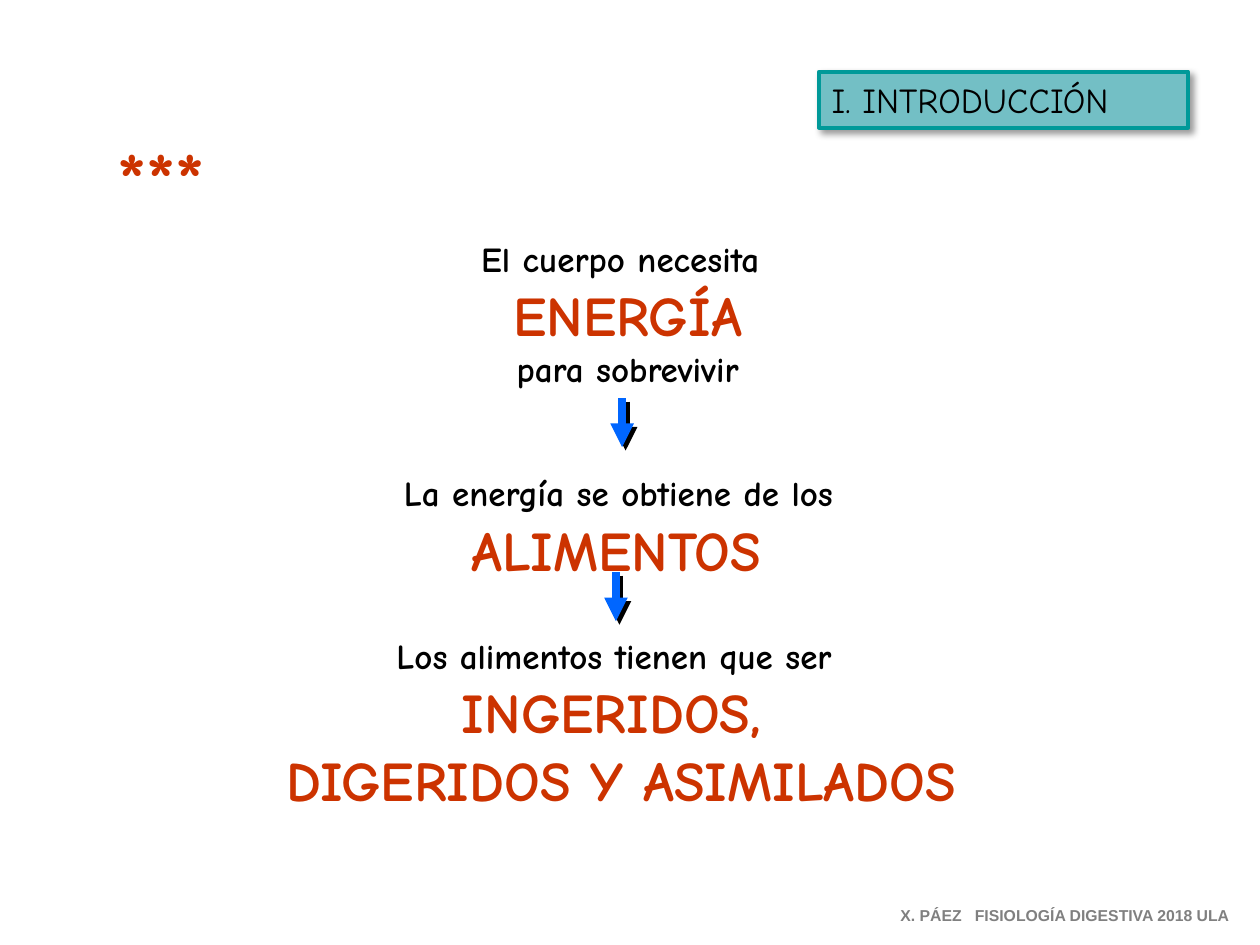
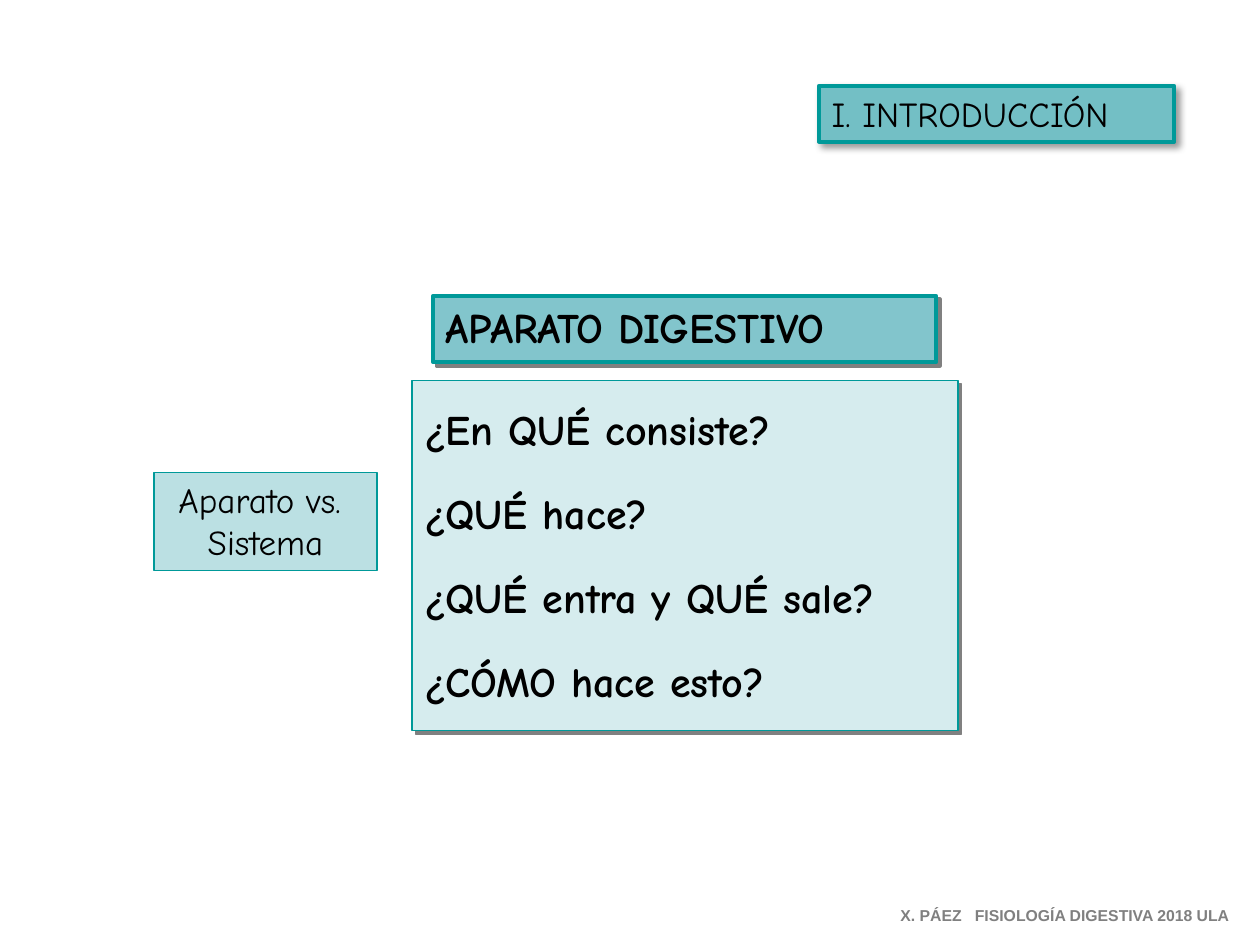
from dataclasses import dataclass

from lxml.etree import SubElement as Sub
from pptx import Presentation
from pptx.dml.color import RGBColor as Rgb
from pptx.enum.shapes import MSO_CONNECTOR as Conn, MSO_SHAPE as Form
from pptx.enum.text import MSO_ANCHOR as Anchor, MSO_AUTO_SIZE as Auto, PP_ALIGN as Align
from pptx.oxml.ns import qn
from pptx.util import Pt


@dataclass(frozen=True)
class Theme:
    # Fonts
    main: str = "Comic Neue"
    small: str = "Arial"
    # Colours
    ink: str = "000000"
    red: str = "CC3300"
    blue: str = "0066FF"
    grey: str = "808080"
    teal: str = "009999"
    band: str = "73BFC5"
    head: str = "82C5CC"
    pale: str = "D6ECEE"
    note: str = "BBE0E3"
    # Type sizes
    foot: int = 9
    text: int = 20
    list: int = 24
    key: int = 32
    star: int = 44
    # Shadows: colour, opacity, blur, distance
    soft: tuple = ("000000", 40, 4, 3)
    hard: tuple = ("808080", 100, 0, 2.8)
    dark: tuple = ("000000", 100, 0, 2.8)


class Deck:
    def __init__(self, theme):
        self.theme = theme
        self.prs = Presentation()
        self.prs.slide_width, self.prs.slide_height = Pt(720), Pt(540)
        self.slide = None

    def page(self, layout, title, place):
        """Start a slide with its section band and footer."""
        t = self.theme
        self.slide = self.prs.slides.add_slide(self.prs.slide_layouts[layout])
        band = self.slide.shapes.title
        self.move(band, place)
        self.paint(band, t.band, 2.25, t.soft)
        self.fill(band, [title], t.text)
        self.text((507.5, 514, 210.5, 18), ["X. PÁEZ   FISIOLOGÍA DIGESTIVA 2018 ULA"],
                  t.foot, t.grey, bold=True, font=t.small)

    def move(self, shape, place):
        shape.left, shape.top, shape.width, shape.height = map(Pt, place)

    def shade(self, effects, look):
        """Fill an effect list with one outer shadow towards the lower right."""
        colour, alpha, blur, dist = look
        outer = Sub(effects, qn("a:outerShdw"), blurRad=str(Pt(blur)), dist=str(Pt(dist)),
                    dir="2700000", algn="ctr", rotWithShape="0")
        tint = Sub(outer, qn("a:srgbClr"), val=colour)
        Sub(tint, qn("a:alpha"), val=str(alpha * 1000))

    def paint(self, shape, fill, width, shadow=None):
        shape.fill.solid()
        shape.fill.fore_color.rgb = Rgb.from_string(fill)
        shape.line.color.rgb = Rgb.from_string(self.theme.teal)
        shape.line.width = Pt(width)
        shape.shadow.inherit = False
        if shadow:
            self.shade(shape.element.spPr.find(qn("a:effectLst")), shadow)

    def style(self, run, size, colour, bold, font):
        run.font.name, run.font.size, run.font.bold = font, Pt(size), bold
        run.font.color.rgb = Rgb.from_string(colour)

    def fill(self, shape, lines, size, colour=None, bold=False, font=None,
             align=Align.LEFT, gap=0):
        """Put formatted lines of text in a shape."""
        frame = shape.text_frame
        frame.text = "\n".join(lines)
        frame.word_wrap, frame.auto_size = True, Auto.NONE
        frame.vertical_anchor = Anchor.TOP
        for row, par in enumerate(frame.paragraphs):
            par.alignment, par.line_spacing = align, 1.0
            par.space_before = Pt(gap if row else 0)
            for run in par.runs:
                self.style(run, size, colour or self.theme.ink, bold, font or self.theme.main)
        return frame

    def text(self, place, lines, size, colour=None, **look):
        box = self.slide.shapes.add_textbox(*map(Pt, place))
        return self.fill(box, lines, size, colour, **look)

    def box(self, place, fill, width, lines, size, shadow=None, **look):
        shape = self.slide.shapes.add_shape(Form.RECTANGLE, *map(Pt, place))
        self.paint(shape, fill, width, shadow)
        self.fill(shape, lines, size, **look)

    def list(self, place, lines, gap, top):
        """Put a plain list without bullets in the body placeholder."""
        t = self.theme
        body = self.slide.placeholders[1]
        self.move(body, place)
        self.paint(body, t.pale, 0.75, t.hard)
        frame = self.fill(body, lines, t.list, bold=True, gap=gap)
        frame.margin_top = Pt(top)
        for par in frame.paragraphs:
            props = par._p.get_or_add_pPr()
            props.set("marL", "0")
            props.set("indent", "0")
            Sub(props, qn("a:buNone"))

    def step(self, place, lead, keys, close=()):
        """Centre a lead line, red key words and a closing line."""
        t = self.theme
        frame = self.text(place, [lead, *keys, *close], t.text, bold=True, align=Align.CENTER)
        pars = frame.paragraphs
        # The wider space after the lead sets the height of its line
        tail = pars[0].add_run()
        tail.text = " "
        self.style(tail, t.list, t.ink, True, t.main)
        for par in pars[1:1 + len(keys)]:
            self.style(par.runs[0], t.key, t.red, True, t.main)

    def stars(self, place):
        t = self.theme
        frame = self.text(place, ["***"], t.star, t.red, bold=True)
        props = frame.paragraphs[0].runs[0]._r.get_or_add_rPr()
        effects = Sub(props, qn("a:effectLst"))
        props.find(qn("a:solidFill")).addnext(effects)
        self.shade(effects, t.dark)

    def arrow(self, x, top, drop=28):
        t = self.theme
        line = self.slide.shapes.add_connector(Conn.STRAIGHT, Pt(x), Pt(top), Pt(x), Pt(top + drop))
        line.line.color.rgb = Rgb.from_string(t.blue)
        line.line.width = Pt(4.5)
        props = line._element.spPr
        Sub(props.find(qn("a:ln")), qn("a:tailEnd"), type="triangle")
        self.shade(Sub(props, qn("a:effectLst")), t.dark)


def main():
    theme = Theme()
    deck = Deck(theme)
    title = "I. INTRODUCCIÓN"

    # Slide 1: from energy to food
    deck.page(5, title, (468, 41, 211, 32))
    deck.step((258, 128, 201.5, 99), "El cuerpo necesita", ["ENERGÍA"], ["para sobrevivir"])
    deck.arrow(355.5, 227.5)
    deck.arrow(352, 327)
    deck.step((208, 262, 299.5, 74), "La energía se obtiene de los", ["ALIMENTOS "])
    deck.step((118, 355, 474.5, 113), "Los alimentos tienen que ser",
              ["INGERIDOS, ", "DIGERIDOS Y ASIMILADOS"])
    deck.stars((60, 71, 85, 60.5))

    # Slide 2: questions about the digestive tract
    deck.page(1, title, (468, 49, 203, 32))
    deck.list((235.5, 217.5, 312, 200),
              ["¿En QUÉ consiste?", "¿QUÉ hace?", "¿QUÉ entra y QUÉ sale?", "¿CÓMO hace esto?"],
              gap=19.2, top=13.2)
    deck.box((247.5, 169, 287.5, 38), theme.head, 2.25, ["APARATO DIGESTIVO"], theme.list,
             theme.hard, bold=True)
    deck.box((88, 270, 127.5, 56), theme.note, 0.75, ["Aparato vs. ", "Sistema"], theme.text,
             align=Align.CENTER)

    deck.prs.save("out.pptx")


if __name__ == "__main__":
    main()
